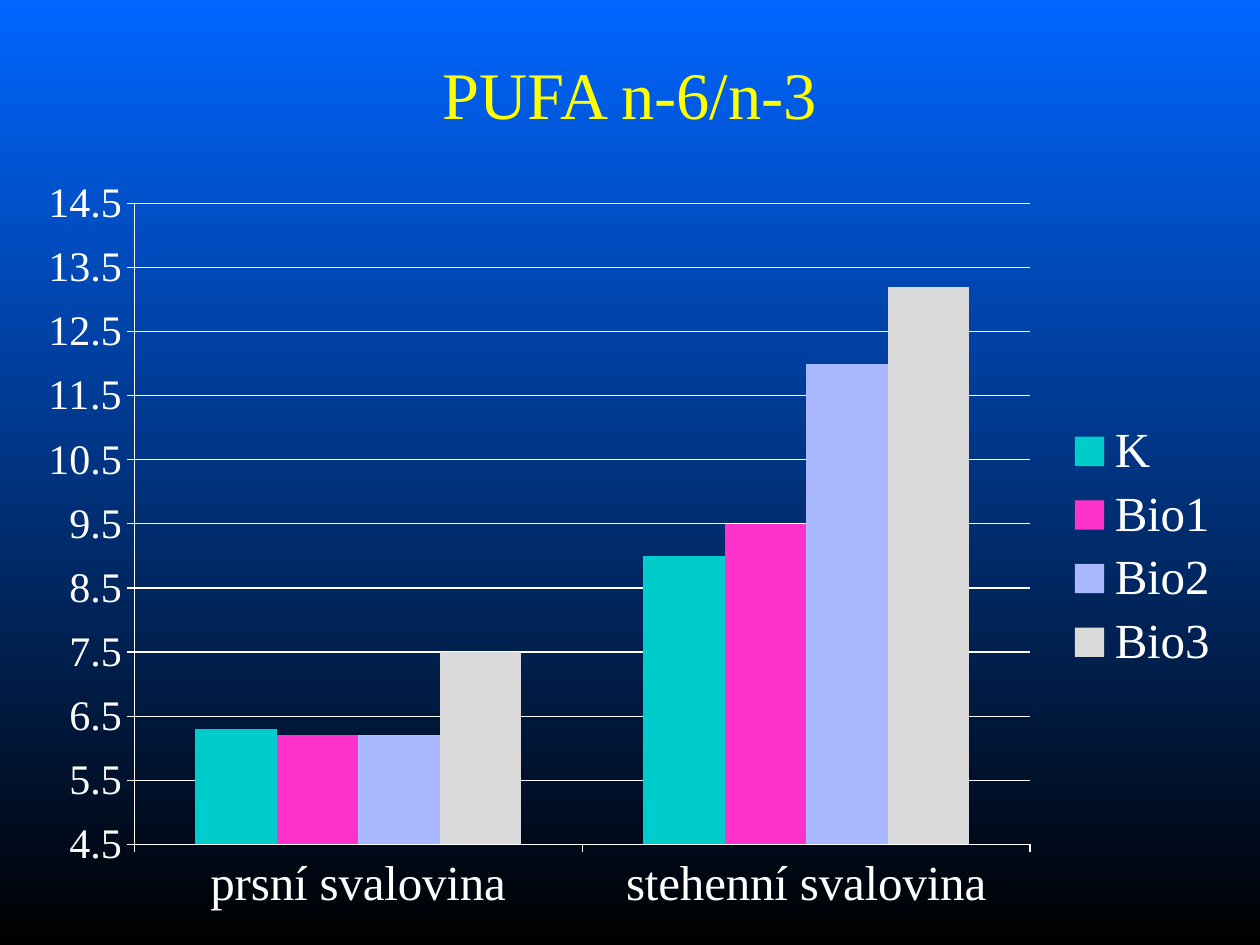
from pptx import Presentation
from pptx.chart.data import CategoryChartData
from pptx.dml.color import RGBColor
from pptx.enum.chart import XL_CHART_TYPE as Kind, XL_LEGEND_POSITION as Side
from pptx.enum.chart import XL_TICK_MARK as Tick
from pptx.enum.text import MSO_ANCHOR, PP_ALIGN
from pptx.oxml import parse_xml
from pptx.oxml.ns import nsdecls, qn
from pptx.util import Inches, Pt

FONT = "Times New Roman"
BLUE = RGBColor(0x00, 0x66, 0xFF)
BLACK = RGBColor(0x00, 0x00, 0x00)
WHITE = RGBColor(0xFF, 0xFF, 0xFF)
YELLOW = RGBColor(0xFF, 0xFF, 0x00)
SERIES = [
    ("K", (6.3, 9), RGBColor(0x00, 0xCC, 0xCC)),
    ("Bio1", (6.2, 9.5), RGBColor(0xFF, 0x33, 0xCC)),
    ("Bio2", (6.2, 12), RGBColor(0xAA, 0xB8, 0xFF)),
    ("Bio3", (7.5, 13.2), RGBColor(0xDA, 0xDA, 0xDA)),
]


def set_font(font, size, color=WHITE):
    font.name = FONT
    font.size = Pt(size)
    font.bold = False
    font.color.rgb = color


def set_line(line):
    line.color.rgb = WHITE
    line.width = Pt(0.75)


prs = Presentation()
prs.slide_width, prs.slide_height = Inches(10), Inches(7.5)
slide = prs.slides.add_slide(prs.slide_layouts[5])

# Background, blue at the top to black at the bottom
fill = slide.background.fill
fill.gradient()
fill.gradient_angle = 270
for stop, pos, color in zip(fill.gradient_stops, (0, 1), (BLUE, BLACK)):
    stop.position = pos
    stop.color.rgb = color

# Title
title = slide.shapes.title
title.left, title.top = Inches(0.75), Inches(0.25)
title.width, title.height = Inches(8.5), Inches(0.98)
frame = title.text_frame
frame.text = "PUFA n-6/n-3"
frame.vertical_anchor = MSO_ANCHOR.MIDDLE
para = frame.paragraphs[0]
para.alignment = PP_ALIGN.CENTER
set_font(para.font, 38, YELLOW)

# Column chart
data = CategoryChartData()
data.categories = ["prsní svalovina", "stehenní svalovina"]
for name, vals, color in SERIES:
    data.add_series(name, vals)
chart = slide.shapes.add_chart(
    Kind.COLUMN_CLUSTERED, Inches(0.2), Inches(1.31), Inches(9.61), Inches(6.06), data
).chart
chart.has_title = False
set_font(chart.font, 10)

plot = chart.plots[0]
plot.vary_by_categories = False
plot.gap_width = 150
plot.overlap = 0
for bars, (name, vals, color) in zip(plot.series, SERIES):
    bars.format.fill.solid()
    bars.format.fill.fore_color.rgb = color

# Axes
for axis, size in ((chart.category_axis, 28), (chart.value_axis, 24)):
    set_font(axis.tick_labels.font, size)
    set_line(axis.format.line)
    axis.major_tick_mark = Tick.OUTSIDE
    axis.minor_tick_mark = Tick.NONE
scale = chart.value_axis
scale.minimum_scale, scale.maximum_scale = 4.5, 14.5
scale.major_unit = 1
scale.tick_labels.number_format = "0.0"
scale.tick_labels.number_format_is_linked = False
scale.has_major_gridlines = True
set_line(scale.major_gridlines.format.line)

# Legend
chart.has_legend = True
chart.legend.position = Side.RIGHT
chart.legend.include_in_layout = False
set_font(chart.legend.font, 28)

# Inner plot area, as fractions of the chart
area = chart._chartSpace.chart.plotArea
for old in area.findall(qn("c:layout")):
    area.remove(old)
sizes = "".join(
    f'<c:{tag} val="{val}"/>' for tag, val in zip("xywh", (0.09, 0.05, 0.74, 0.84))
)
area.insert(0, parse_xml(
    f'<c:layout {nsdecls("c")}><c:manualLayout><c:layoutTarget val="inner"/>'
    f'<c:xMode val="edge"/><c:yMode val="edge"/>{sizes}</c:manualLayout></c:layout>'
))

prs.save("out.pptx")
